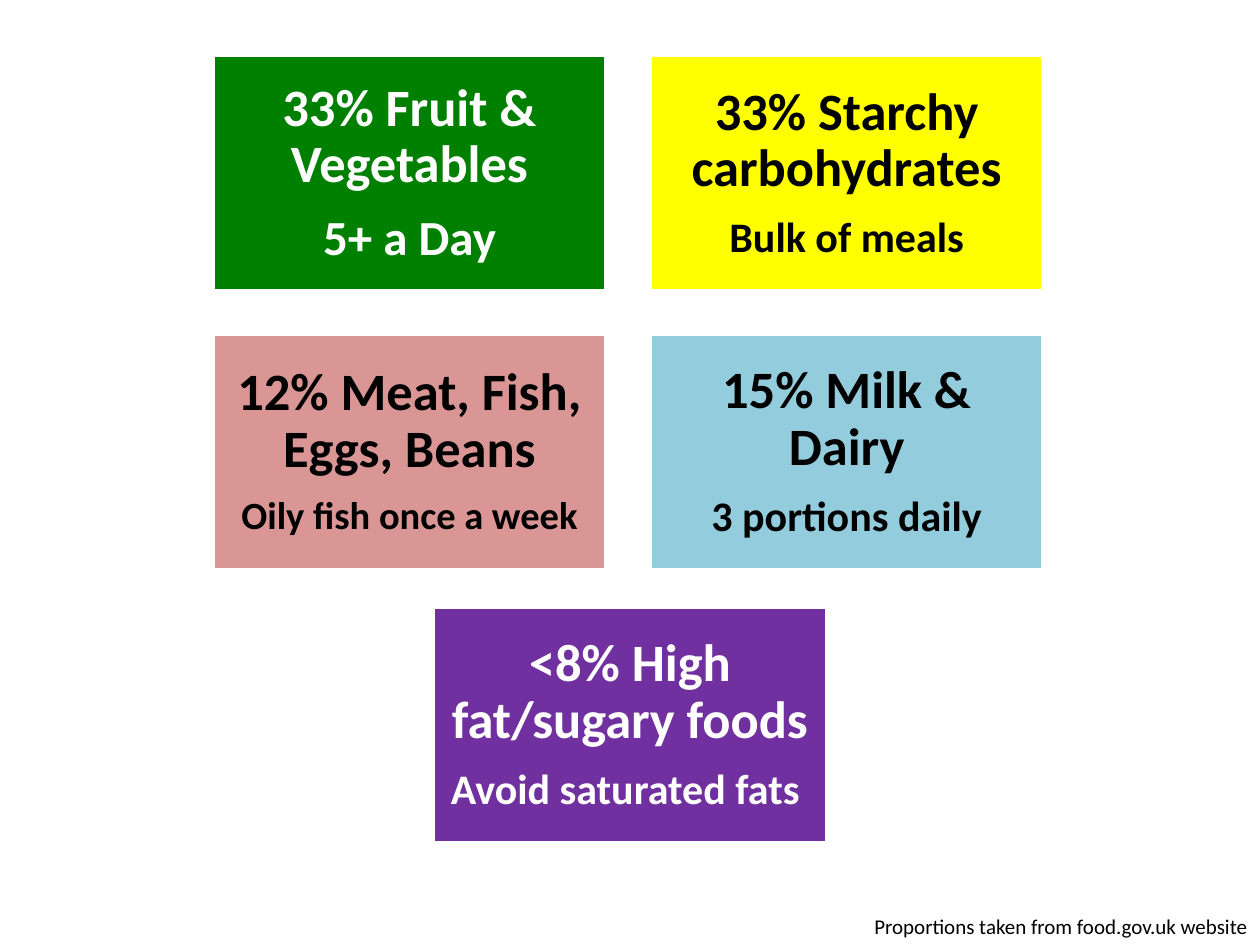
import pptx
import pptx.util
import pptx.dml.color
import pptx.enum.shapes
import pptx.enum.text

Pt = pptx.util.Pt
ALIGN = pptx.enum.text.PP_ALIGN
INKS = {
    "black": "000000", "white": "FFFFFF", "green": "008000", "yellow": "FFFF00",
    "pink": "D99694", "blue": "93CDDD", "purple": "7030A0",
}
WIDE, HIGH = 224.64, 134.64
LEFT, MID, RIGHT = 121.68, 247.68, 371.52
TOP, NEXT, LAST = 31.68, 190.8, 347.04
FOODS = [
    (RIGHT, TOP, "yellow", "black", "33% Starchy carbohydrates", "Bulk of meals", 24),
    (LEFT, TOP, "green", "white", "33% Fruit & Vegetables", "5+ a Day", 28),
    (RIGHT, NEXT, "blue", "black", "15% Milk & Dairy", "3 portions daily", 24),
    (LEFT, NEXT, "pink", "black", "12% Meat, Fish, Eggs, Beans", "Oily fish once a week", 22),
    (MID, LAST, "purple", "white", "<8% High fat/sugary foods", "Avoid saturated fats ", 24),
]


def ink(name):
    return pptx.dml.color.RGBColor.from_string(INKS[name])


def style(para, text, size, tint, align, bold=False):
    para.text = text
    para.alignment = align
    para.font.name = "Calibri"
    para.font.size = Pt(size)
    para.font.bold = bold
    para.font.color.rgb = ink(tint)


def add_food(slide, box, fill, tint, head, note, size):
    card = slide.shapes.add_shape(
        pptx.enum.shapes.MSO_SHAPE.RECTANGLE, *map(Pt, box))
    card.shadow.inherit = False
    card.fill.solid()
    card.fill.fore_color.rgb = ink(fill)
    card.line.color.rgb = ink("white")
    card.line.width = Pt(2)
    frame = card.text_frame
    frame.word_wrap = True
    frame.vertical_anchor = pptx.enum.text.MSO_ANCHOR.MIDDLE
    frame.margin_left = frame.margin_right = Pt(8.64)
    frame.margin_top = frame.margin_bottom = Pt(8.64)
    frame.add_paragraph()
    for para, text, pts in zip(frame.paragraphs, (head, note), (30, size)):
        style(para, text, pts, tint, ALIGN.CENTER, True)
        para.line_spacing = 0.9
        para.space_after = Pt(10.5)


def add_source(slide, box):
    frame = slide.shapes.add_textbox(*map(Pt, box)).text_frame
    frame.word_wrap = True
    frame.auto_size = pptx.enum.text.MSO_AUTO_SIZE.SHAPE_TO_FIT_TEXT
    style(frame.paragraphs[0], "Proportions taken from food.gov.uk website",
          12, "black", ALIGN.RIGHT)


def main():
    deck = pptx.Presentation()
    deck.slide_width, deck.slide_height = Pt(720), Pt(540)
    slide = deck.slides.add_slide(deck.slide_layouts[6])
    add_source(slide, (478.8, 518.4, 241.2, 21.6))
    for left, top, *rest in FOODS:
        add_food(slide, (left, top, WIDE, HIGH), *rest)
    deck.save("out.pptx")


if __name__ == "__main__":
    main()
